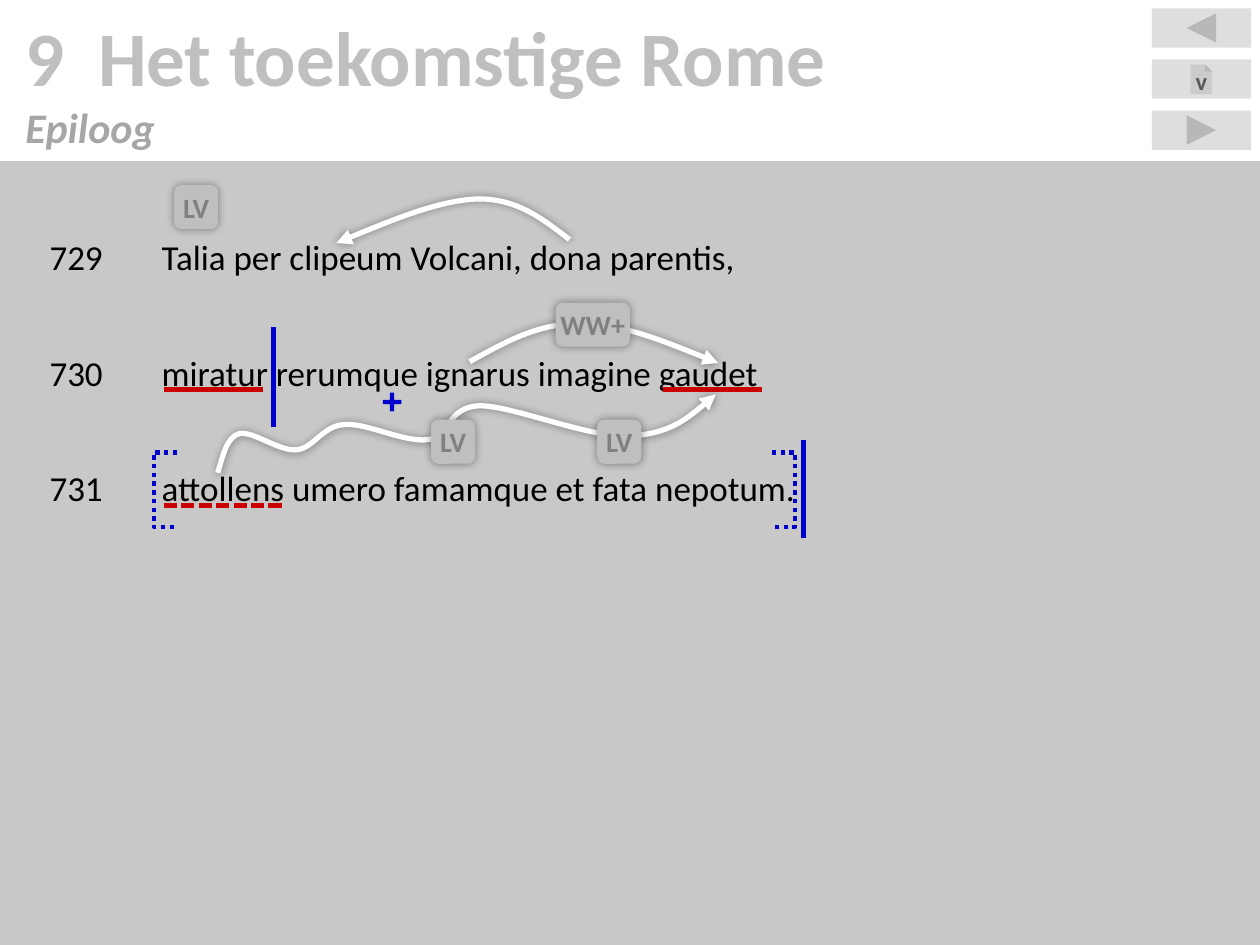
"""Build the annotated Latin verse slide for lines 729 to 731."""
from dataclasses import dataclass
from typing import Any, NamedTuple, Optional

from lxml import etree
from pptx import Presentation
from pptx import util as u
from pptx.dml.color import RGBColor
from pptx.enum import dml, shapes, text
from pptx.oxml.ns import qn

Kind = shapes.MSO_SHAPE
Dash = dml.MSO_LINE
Point = tuple[float, float]


@dataclass(frozen=True)
class Theme:
    font: str = "Calibri"
    grey: str = "BFBFBF"
    subtitle: str = "A6A6A6"
    label: str = "808080"
    button_text: str = "595959"
    ink: str = "000000"
    arrow: str = "FFFFFF"
    verb: str = "CC0000"
    clause: str = "0000CC"
    title_size: float = 44
    subtitle_size: float = 24
    verse_size: float = 20
    label_size: float = 16
    button_size: float = 14
    mark_width: float = 2.5
    arrow_width: float = 3


class Mark(NamedTuple):
    start: Point
    end: Point
    color: str
    dash: Optional[Dash] = None


class Badge(NamedTuple):
    label: str
    left: float
    top: float
    width: float = 0.89


class Button(NamedTuple):
    kind: Kind
    row: int
    label: str = ""


THEME = Theme()
PAGE_WIDTH, PAGE_HEIGHT, HEADER = 25.4, 19.05, 3.25
BADGE_HEIGHT = 0.89
BUTTON_LEFT, BUTTON_TOP, BUTTON_STEP = 23.22, 0.17, 1.03
BRACKET_TOP, BRACKET_BOTTOM, BRACKET_ARM = 9.12, 10.62, 0.47

VERSES = {
    729: "Talia per clipeum Volcani, dona parentis,",
    730: "miratur rerumque ignarus imagine gaudet",
    731: "attollens umero famamque et fata nepotum.",
}
BUTTONS = [
    Button(Kind.ACTION_BUTTON_BACK_OR_PREVIOUS, 0),
    Button(Kind.ACTION_BUTTON_DOCUMENT, 1, "v"),
    Button(Kind.ACTION_BUTTON_FORWARD_OR_NEXT, 2),
]
MARKS = [
    Mark((16.2, 8.86), (16.2, 10.85), THEME.clause),
    Mark((5.51, 6.6), (5.51, 8.61), THEME.clause),
    Mark((3.3, 7.85), (5.31, 7.85), THEME.verb),
    Mark((13.36, 7.85), (15.37, 7.85), THEME.verb),
    Mark((3.3, 10.19), (5.69, 10.19), THEME.verb, Dash.SQUARE_DOT),
]
ARROWS: list[list[Point]] = [
    [(11.48, 4.83), (10.95, 4.42), (10.44, 4.01), (9.65, 4.01),
     (8.86, 4.04), (7.82, 4.47), (6.78, 4.9)],
    [(9.47, 7.29), (10.16, 6.91), (10.87, 6.5), (11.71, 6.53),
     (12.55, 6.53), (13.51, 6.93), (14.48, 7.32)],
    [(4.39, 9.53), (4.5, 9.17), (4.57, 8.81), (4.83, 8.74),
     (5.11, 8.69), (5.61, 9.09), (5.97, 9.07),
     (6.32, 9.04), (6.5, 8.59), (6.93, 8.56),
     (7.37, 8.51), (8.18, 8.94), (8.64, 8.86),
     (9.09, 8.81), (8.99, 8.2), (9.68, 8.18),
     (10.34, 8.18), (11.91, 8.84), (12.7, 8.79),
     (13.49, 8.74), (13.97, 8.36), (14.43, 7.95)],
]
BADGES = [
    Badge("LV", 3.51, 3.73),
    Badge("WW+", 11.2, 6.1, 1.5),
    Badge("LV", 8.69, 8.46),
    Badge("LV", 12.04, 8.46),
]


def apply(target: Any, values: dict[str, Any]) -> None:
    for name, value in values.items():
        setattr(target, name, value)


def child(parent: Any, tag: str, **attributes: Any) -> Any:
    values = {name: str(value) for name, value in attributes.items()}
    return etree.SubElement(parent, qn(tag), values)


def set_effect(shape: Any, glow: bool = False) -> None:
    effects = child(shape._element.spPr, "a:effectLst")
    if glow:
        shadow = child(effects, "a:outerShdw", blurRad=u.Pt(5), dist=0,
                       algn="ctr", rotWithShape=0)
        child(child(shadow, "a:srgbClr", val=THEME.ink), "a:alpha", val=40000)


def set_fill(shape: Any, color: str, opacity: int = 100) -> None:
    shape.fill.solid()
    shape.fill.fore_color.rgb = RGBColor.from_string(color)
    if opacity < 100:
        tint = shape._element.spPr.find(qn("a:solidFill"))[0]
        child(tint, "a:alpha", val=opacity * 1000)


def set_line(shape: Any, color: str, width: float, dash: Optional[Dash] = None) -> None:
    shape.line.color.rgb = RGBColor.from_string(color)
    shape.line.width = u.Pt(width)
    if dash is not None:
        shape.line.dash_style = dash


def format_frame(frame: Any, anchor: Any, across: float, down: float) -> None:
    apply(frame, dict(word_wrap=True, auto_size=text.MSO_AUTO_SIZE.NONE,
                      vertical_anchor=anchor,
                      margin_left=u.Cm(across), margin_right=u.Cm(across),
                      margin_top=u.Cm(down), margin_bottom=u.Cm(down)))


def write(para: Any, words: str, size: float, color: str, align: Any,
          tab: float = 0, **style: bool) -> None:
    if tab:
        stops = child(para._p.get_or_add_pPr(), "a:tabLst")
        child(stops, "a:tab", pos=u.Cm(tab), algn="l")
    para.alignment = align
    span = para.add_run()
    span.text = words
    apply(span.font, dict(name=THEME.font, size=u.Pt(size), **style))
    span.font.color.rgb = RGBColor.from_string(color)


def add_box(page: Any, kind: Kind, left: float, top: float, width: float,
            height: float, color: str, opacity: int = 100, glow: bool = False) -> Any:
    box = page.shapes.add_shape(kind, u.Cm(left), u.Cm(top), u.Cm(width), u.Cm(height))
    set_fill(box, color, opacity)
    box.line.fill.background()
    set_effect(box, glow)
    return box


def add_title(page: Any) -> None:
    title = page.shapes.title
    apply(title, dict(left=0, top=0, width=u.Cm(PAGE_WIDTH), height=u.Cm(HEADER)))
    frame = title.text_frame
    format_frame(frame, text.MSO_ANCHOR.MIDDLE, 0.51, 0.51)
    left = text.PP_ALIGN.LEFT
    write(frame.paragraphs[0], "9\tHet toekomstige Rome", THEME.title_size,
          THEME.grey, left, tab=1.47, bold=True)
    write(frame.add_paragraph(), "Epiloog", THEME.subtitle_size,
          THEME.subtitle, left, bold=True, italic=True)


def add_verses(page: Any) -> None:
    box = add_box(page, Kind.RECTANGLE, 0, HEADER, PAGE_WIDTH,
                  PAGE_HEIGHT - HEADER, THEME.grey, opacity=85)
    frame = box.text_frame
    format_frame(frame, text.MSO_ANCHOR.TOP, 1, 1.5)
    for index, (number, verse) in enumerate(VERSES.items()):
        para = frame.add_paragraph() if index else frame.paragraphs[0]
        write(para, f"{number}\t{verse}", THEME.verse_size, THEME.ink,
              text.PP_ALIGN.LEFT, tab=2.26)
        para.space_after = u.Pt(42)


def add_button(page: Any, button: Button) -> None:
    box = add_box(page, button.kind, BUTTON_LEFT, BUTTON_TOP + button.row * BUTTON_STEP,
                  2, 0.79, THEME.grey, opacity=50)
    if button.label:
        format_frame(box.text_frame, text.MSO_ANCHOR.TOP, 0.25, 0.13)
        write(box.text_frame.paragraphs[0], button.label, THEME.button_size,
              THEME.button_text, text.PP_ALIGN.CENTER, bold=True)


def add_mark(page: Any, mark: Mark) -> None:
    ends = [u.Cm(value) for value in (*mark.start, *mark.end)]
    line = page.shapes.add_connector(shapes.MSO_CONNECTOR.STRAIGHT, *ends)
    set_line(line, mark.color, THEME.mark_width, mark.dash)
    set_effect(line)


def add_outline(page: Any, points: list[Point]) -> Any:
    start, *rest = [(u.Cm(x), u.Cm(y)) for x, y in points]
    builder = page.shapes.build_freeform(*start)
    builder.add_line_segments(rest, close=False)
    outline = builder.convert_to_shape()
    outline.fill.background()
    return outline


def add_bracket(page: Any, spine: float, arm: float) -> None:
    bracket = add_outline(page, [(spine + arm, BRACKET_TOP), (spine, BRACKET_TOP),
                                 (spine, BRACKET_BOTTOM), (spine + arm, BRACKET_BOTTOM)])
    set_line(bracket, THEME.clause, THEME.mark_width, Dash.ROUND_DOT)
    set_effect(bracket)


def add_arrow(page: Any, points: list[Point]) -> None:
    """Draw a chain of cubic curves that ends in an arrowhead."""
    arrow = add_outline(page, points[::3])
    for index, segment in enumerate(list(arrow._element.spPr.iter(qn("a:lnTo")))):
        segment.tag = qn("a:cubicBezTo")
        segment.clear()
        for x, y in points[3 * index + 1:3 * index + 4]:
            child(segment, "a:pt", x=u.Cm(x) - arrow.left, y=u.Cm(y) - arrow.top)
    set_line(arrow, THEME.arrow, THEME.arrow_width)
    child(arrow._element.spPr.find(qn("a:ln")), "a:tailEnd", type="triangle")
    set_effect(arrow, glow=True)


def add_badge(page: Any, badge: Badge) -> None:
    box = add_box(page, Kind.ROUNDED_RECTANGLE, badge.left, badge.top, badge.width,
                  BADGE_HEIGHT, THEME.grey, glow=True)
    format_frame(box.text_frame, text.MSO_ANCHOR.MIDDLE, 0, 0)
    write(box.text_frame.paragraphs[0], badge.label, THEME.label_size,
          THEME.label, text.PP_ALIGN.CENTER, bold=True)


def main() -> None:
    deck = Presentation()
    apply(deck, dict(slide_width=u.Cm(PAGE_WIDTH), slide_height=u.Cm(PAGE_HEIGHT)))
    page = deck.slides.add_slide(deck.slide_layouts[5])
    add_title(page)
    add_verses(page)
    for draw, items in ((add_button, BUTTONS), (add_mark, MARKS),
                        (add_arrow, ARROWS), (add_badge, BADGES)):
        for item in items:
            draw(page, item)
    plus = add_box(page, Kind.MATH_PLUS, 7.65, 7.85, 0.51, 0.51, THEME.clause)
    plus.adjustments[0] = 0.172
    add_bracket(page, 3.1, BRACKET_ARM)
    add_bracket(page, 16.03, -BRACKET_ARM)
    deck.save("out.pptx")


if __name__ == "__main__":
    main()
